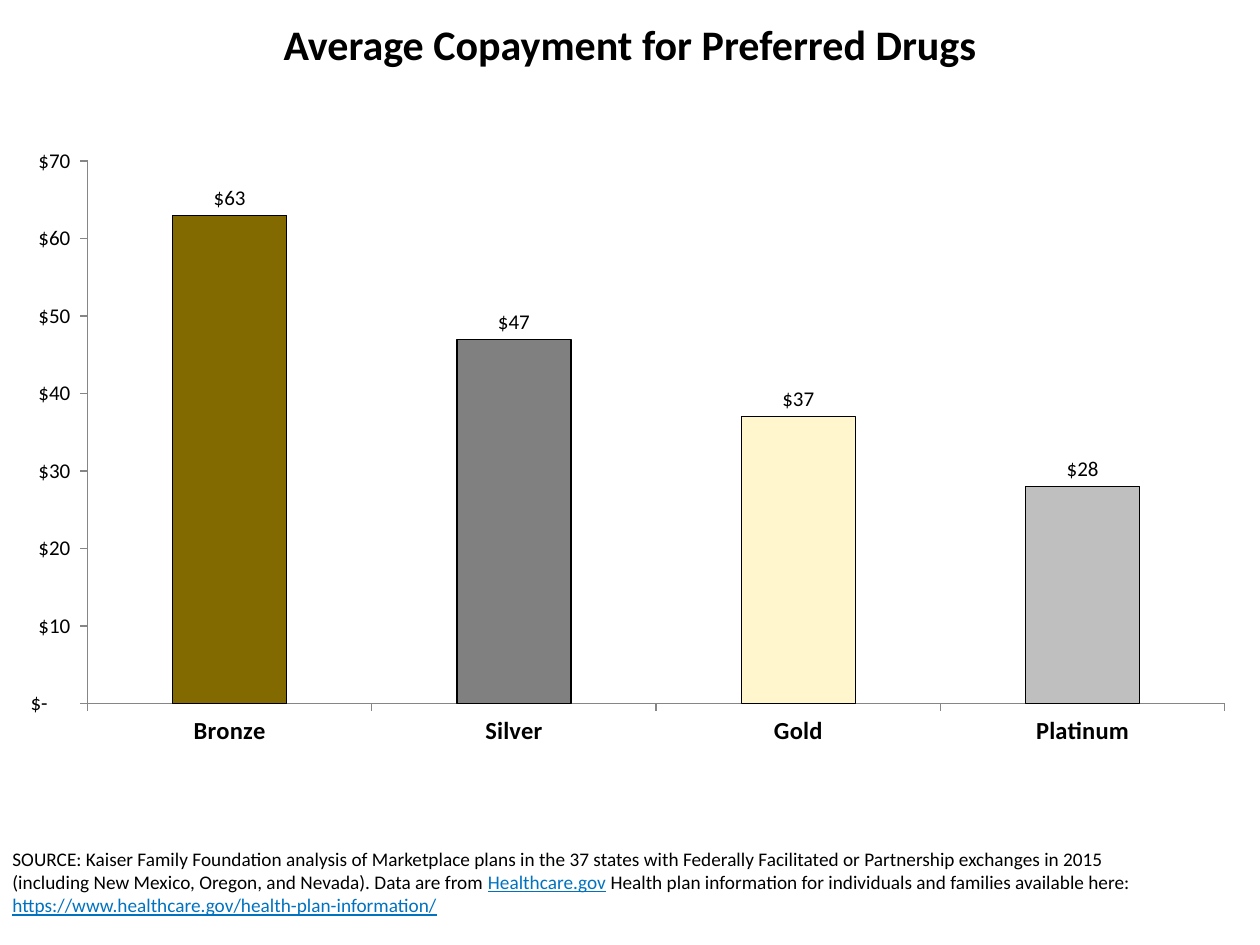
from lxml.etree import SubElement
from pptx import Presentation
from pptx.chart.data import CategoryChartData
from pptx.dml.color import RGBColor
from pptx.enum.chart import XL_CHART_TYPE as ChartType, XL_LABEL_POSITION as LabelPosition
from pptx.enum.chart import XL_TICK_MARK as TickMark
from pptx.enum.text import PP_ALIGN as Align
from pptx.oxml.ns import qn
from pptx.util import Inches, Pt

WIDTH, HEIGHT = Inches(10), Inches(7.5)
FONT = "Calibri"
COLORS = {"text": "000000", "link": "0072C0", "axis": "868686"}
DOLLARS = '_("$"* #,##0_);_("$"* \\(#,##0\\);_("$"* "-"??_);_(@_)'
COPAYMENTS = {
    "Bronze": (63, "826A00"),
    "Silver": (47, "808080"),
    "Gold": (37, "FFF6CD"),
    "Platinum": (28, "BFBFBF"),
}
SOURCE = [
    ("SOURCE: Kaiser Family Foundation analysis of Marketplace plans in the 37 states with "
     "Federally Facilitated or Partnership exchanges in 2015 (including New Mexico, Oregon, "
     "and Nevada). Data are from ", "text"),
    ("Healthcare.gov", "link"),
    (" Health plan information for individuals and families available here: ", "text"),
    ("https://www.healthcare.gov/health-plan-information/", "link"),
]


def color(name):
    """Return the RGB colour for a palette name or a hex string."""
    return RGBColor.from_string(COLORS.get(name, name))


def area(left, top, width, height):
    """Turn shares of the slide's size into lengths."""
    return int(left * WIDTH), int(top * HEIGHT), int(width * WIDTH), int(height * HEIGHT)


def style_font(font, size, bold=False):
    """Apply the common typeface and text colour."""
    font.name, font.size, font.bold = FONT, Pt(size), bold
    font.color.rgb = color("text")


def add_text(slide, place, runs, size, bold=False, align=Align.LEFT):
    """Add a wrapped one-paragraph text box made of coloured runs."""
    frame = slide.shapes.add_textbox(*area(*place)).text_frame
    frame.word_wrap = True
    paragraph = frame.paragraphs[0]
    paragraph.alignment = align
    style_font(paragraph.font, size, bold)
    for text, kind in runs:
        run = paragraph.add_run()
        run.text = text
        run.font.color.rgb = color(kind)
        run.font.underline = kind == "link"


def style_axis(axis, size, bold=False):
    """Give an axis its font, line and outward ticks."""
    style_font(axis.tick_labels.font, size, bold)
    axis.format.line.color.rgb = color("axis")
    axis.format.line.width = Pt(0.75)
    axis.major_tick_mark, axis.minor_tick_mark = TickMark.OUTSIDE, TickMark.NONE
    axis.has_major_gridlines = False


def place_plot(chart, **shares):
    """Fix the inner plot area as shares of the chart's size."""
    plot_area = chart.plots[0]._element.getparent()
    layout = plot_area.find(qn("c:layout"))
    if layout is None:
        layout = SubElement(plot_area, qn("c:layout"))
        plot_area.insert(0, layout)
    manual = SubElement(layout, qn("c:manualLayout"))
    settings = {"layoutTarget": "inner", "xMode": "edge", "yMode": "edge", **shares}
    for name, value in settings.items():
        SubElement(manual, qn(f"c:{name}")).set("val", str(value))


def add_copayment_chart(slide, place):
    """Add the column chart with one colour per plan level."""
    data = CategoryChartData(number_format=DOLLARS)
    data.categories = list(COPAYMENTS)
    data.add_series("Series 1", [value for value, _ in COPAYMENTS.values()])
    chart = slide.shapes.add_chart(ChartType.COLUMN_CLUSTERED, *area(*place), data).chart
    chart.has_legend = chart.has_title = False
    style_font(chart.font, 12)
    style_axis(chart.category_axis, 14, bold=True)
    style_axis(chart.value_axis, 12)
    axis = chart.value_axis
    axis.minimum_scale, axis.maximum_scale, axis.major_unit = 0, 70, 10
    axis.tick_labels.number_format = DOLLARS
    axis.tick_labels.number_format_is_linked = False

    plot = chart.plots[0]
    plot.gap_width, plot.vary_by_categories = 150, False
    plot.has_data_labels = True
    labels = plot.data_labels
    labels.show_value, labels.position = True, LabelPosition.OUTSIDE_END
    labels.number_format, labels.number_format_is_linked = DOLLARS, False
    style_font(labels.font, 12)
    for index, (_, fill) in enumerate(COPAYMENTS.values()):
        column = plot.series[0].points[index].format
        column.fill.solid()
        column.fill.fore_color.rgb = color(fill)
        column.line.color.rgb = color("text")
        column.line.width = Pt(0.75)
    place_plot(chart, x=0.07, y=0.04, w=0.91, h=0.87)


def main():
    """Build and save the slide."""
    presentation = Presentation()
    presentation.slide_width, presentation.slide_height = WIDTH, HEIGHT
    slide = presentation.slides.add_slide(presentation.slide_layouts[6])
    add_text(slide, (0, 0.89, 0.925, 0.11), SOURCE, 11)
    add_text(slide, (0.01, 0.013, 0.98, 0.13),
             [("Average Copayment for Preferred Drugs", "text")], 24, True, Align.CENTER)
    add_copayment_chart(slide, (0, 0.144, 0.992, 0.66))
    presentation.save("out.pptx")


if __name__ == "__main__":
    main()
